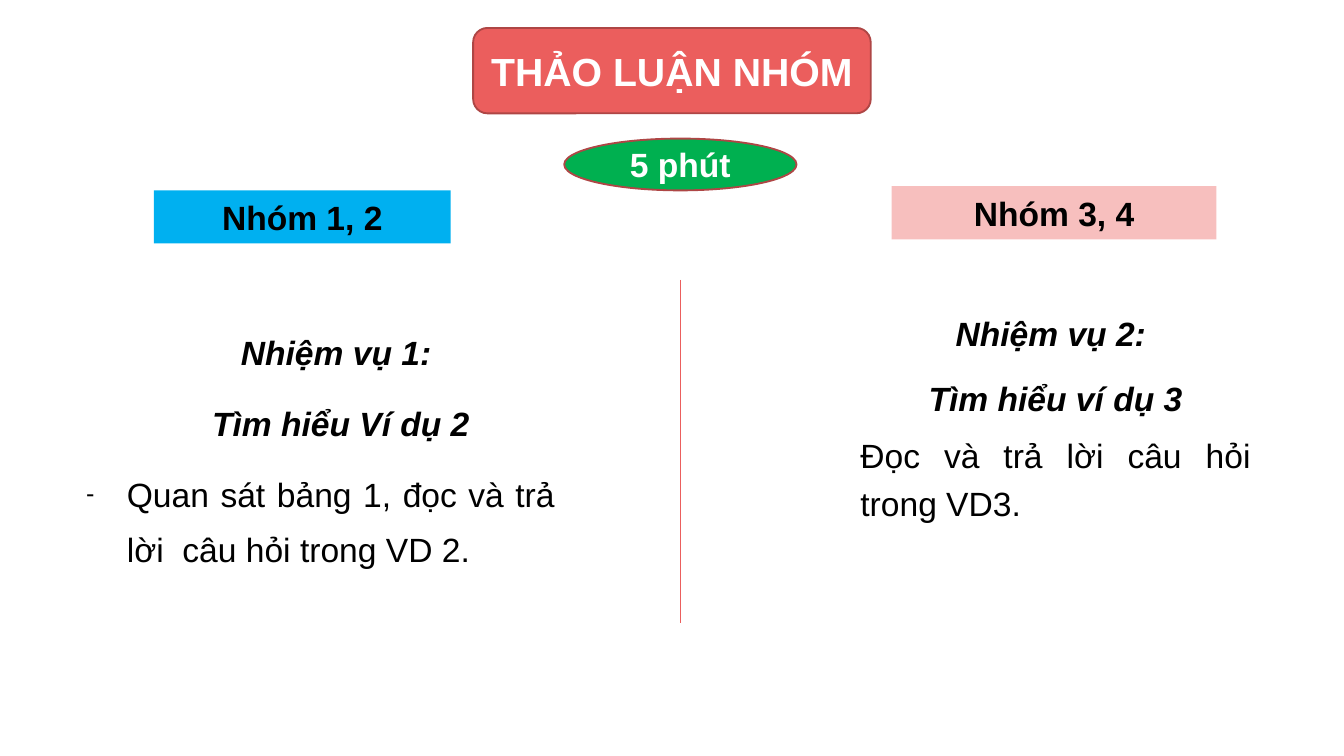
from lxml.etree import SubElement
from pptx import Presentation
from pptx.dml.color import RGBColor
from pptx.enum.shapes import MSO_CONNECTOR, MSO_SHAPE
from pptx.enum.text import MSO_ANCHOR, MSO_AUTO_SIZE, PP_ALIGN
from pptx.oxml.ns import qn
from pptx.util import Emu, Pt

PX = 9525  # 96 px to the inch


def px(n):
    return Emu(n * PX)


def color(hex_text):
    return RGBColor.from_string(hex_text)


def write(p, text, size=18, font="Arial", fill="000000", bold=False,
          italic=False, align=PP_ALIGN.CENTER, line=None, before=0, after=0):
    """Put one formatted run in a paragraph."""
    p.alignment = align
    p.line_spacing = line
    p.space_before, p.space_after = Pt(before), Pt(after)
    r = p.add_run()
    r.text = text
    r.font.name, r.font.size = font, Pt(size)
    r.font.bold, r.font.italic = bold, italic
    r.font.color.rgb = color(fill)


class Deck:
    RED, DARK_RED, PINK = "EB5E5D", "AE4645", "F7BFBE"
    BLUE, GREEN, WHITE = "00B0F0", "00B050", "FFFFFF"

    def __init__(self, width, height):
        self.prs = Presentation()
        self.prs.slide_width, self.prs.slide_height = px(width), px(height)
        self.s = self.prs.slides.add_slide(self.prs.slide_layouts[3])
        # The heading is a rounded shape, so the empty title goes
        title = self.s.shapes.title._element
        title.getparent().remove(title)

    def label(self, kind, text, *box, fill, line=None, ink="000000", size=18):
        sp = self.s.shapes.add_shape(kind, *map(px, box))
        sp.shadow.inherit = False
        sp.fill.solid()
        sp.fill.fore_color.rgb = color(fill)
        if line:
            sp.line.color.rgb = color(line)
            sp.line.width = Pt(1)
        else:
            sp.line.fill.background()
        tf = sp.text_frame
        tf.word_wrap = True
        tf.vertical_anchor = MSO_ANCHOR.MIDDLE
        tf.margin_left = tf.margin_right = 0
        write(tf.paragraphs[0], text, size=size, fill=ink, bold=True)

    def divider(self, x, top, bottom):
        ln = self.s.shapes.add_connector(
            MSO_CONNECTOR.STRAIGHT, px(x), px(top), px(x), px(bottom))
        ln.line.color.rgb = color(self.RED)
        ln.line.width = Pt(0.5)
        SubElement(ln._element.spPr, qn("a:effectLst"))

    def task(self, idx, headings, body, *box, line, gap=0, indent=0):
        """Two centred headings and a justified item, dashed if indented."""
        sp = self.s.placeholders[idx]
        sp.left, sp.top, sp.width, sp.height = map(px, box)
        tf = sp.text_frame
        tf.word_wrap = True
        tf.auto_size = MSO_AUTO_SIZE.NONE
        tf.vertical_anchor = MSO_ANCHOR.TOP
        for i, text in enumerate([*headings, body]):
            p = tf.paragraphs[0] if i == 0 else tf.add_paragraph()
            is_body = text == body
            space = gap if is_body else 4.5
            write(p, text, bold=not is_body, italic=not is_body, line=line,
                  align=PP_ALIGN.JUSTIFY if is_body else PP_ALIGN.CENTER,
                  before=space, after=space)
            pPr = p._p.get_or_add_pPr()
            pPr.set("marL", str(px(indent)))
            if is_body and indent:
                pPr.set("indent", str(-px(indent)))
                SubElement(pPr, qn("a:buSzPct"), val="75000")
                SubElement(pPr, qn("a:buFont"), typeface="Arial")
                SubElement(pPr, qn("a:buChar"), char="-")
            else:
                pPr.set("indent", "0")
                SubElement(pPr, qn("a:buNone"))


def main():
    d = Deck(960, 540)

    # Heading and time limit
    d.label(MSO_SHAPE.ROUNDED_RECTANGLE, "THẢO LUẬN NHÓM", 338, 20, 284, 61,
            fill=d.RED, line=d.DARK_RED, ink=d.WHITE, size=21)
    d.label(MSO_SHAPE.OVAL, "5 phút", 403, 99, 166, 37,
            fill=d.GREEN, line=d.DARK_RED, ink=d.WHITE)

    # Group labels and the line between them
    d.label(MSO_SHAPE.RECTANGLE, "Nhóm 1, 2", 110, 136, 212, 38, fill=d.BLUE)
    d.label(MSO_SHAPE.RECTANGLE, "Nhóm 3, 4", 637, 133, 232, 38, fill=d.PINK)
    d.divider(486, 200, 445)

    # Tasks
    d.task(1, ["Nhiệm vụ 1: ", "Tìm hiểu Ví dụ 2"],
           "Quan sát bảng 1, đọc và trả lời  câu hỏi trong VD 2.",
           52, 222, 354, 189, line=1.35, gap=4.5, indent=29)
    d.task(2, ["Nhiệm vụ 2: ", "Tìm hiểu ví dụ 3"],
           "Đọc và trả lời câu hỏi trong VD3.",
           605, 213, 298, 166, line=1.2)

    d.prs.save("out.pptx")


if __name__ == "__main__":
    main()
